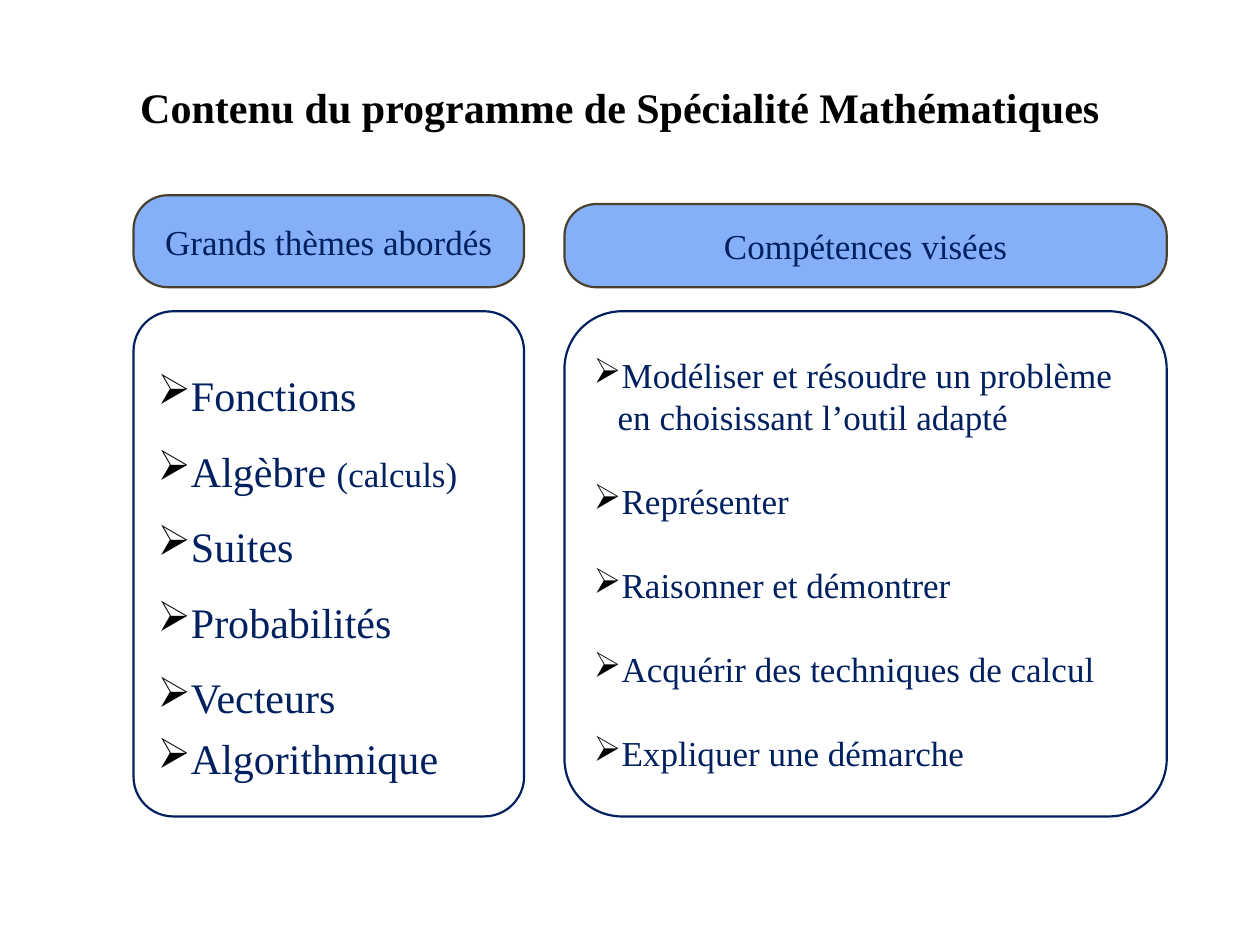
"""Build the slide presenting the mathematics speciality programme."""
from dataclasses import dataclass

from lxml.etree import SubElement
from pptx import Presentation
from pptx.dml.color import RGBColor
from pptx.enum.shapes import MSO_SHAPE
from pptx.enum.text import MSO_ANCHOR, PP_ALIGN
from pptx.oxml.ns import qn
from pptx.util import Inches, Pt

FONT = "Times New Roman"
BLACK = RGBColor(0x00, 0x00, 0x00)
WHITE = RGBColor(0xFF, 0xFF, 0xFF)
NAVY = RGBColor(0x00, 0x20, 0x60)
SKY = RGBColor(0x85, 0xB0, 0xF7)
BROWN = RGBColor(0x4A, 0x40, 0x2E)
HEADER_BOTTOM = 2.28
PANEL_TOP, PANEL_HEIGHT = 2.47, 4.01
INDENT = 0.19


@dataclass
class Item:
    runs: list[tuple[str, int]]
    line_spacing: float = 1.0
    space_before: int = 0


@dataclass
class Column:
    left: float
    width: float
    header: str
    header_height: float
    header_radius: float
    panel_radius: float
    items: list[Item]


COLUMNS = [
    Column(1.06, 3.1, "Grands thèmes abordés", 0.73, 0.373, 0.102, [
        Item([("Fonctions", 24)], 1.5),
        Item([("Algèbre ", 24), ("(calculs)", 20)], 1.5),
        Item([("Suites", 24)], 1.5),
        Item([("Probabilités", 24)], 1.5),
        Item([("Vecteurs", 24)], 1.5),
        Item([("Algorithmique", 24)], space_before=6),
    ]),
    Column(4.48, 4.78, "Compétences visées", 0.66, 0.38, 0.114, [
        Item([("Modéliser et résoudre un problème en choisissant l’outil adapté", 20)]),
        Item([("Représenter", 20)], space_before=24),
        Item([("Raisonner et démontrer", 20)], space_before=24),
        Item([("Acquérir des techniques de calcul", 20)], space_before=24),
        Item([("Expliquer une démarche", 20)], space_before=24),
    ]),
]


def add_run(p, text: str, size: int, color: RGBColor, bold: bool = False) -> None:
    r = p.add_run()
    r.text = text
    r.font.name = FONT
    r.font.size = Pt(size)
    r.font.bold = bold
    r.font.color.rgb = color


def add_bullet(p) -> None:
    pPr = p._p.get_or_add_pPr()
    pPr.set("marL", str(Inches(INDENT)))
    pPr.set("indent", str(Inches(-INDENT)))
    color = SubElement(pPr, qn("a:buClr"))
    SubElement(color, qn("a:srgbClr"), val=str(BLACK))
    SubElement(pPr, qn("a:buChar"), char="➢")


def add_rounded(s, left: float, top: float, width: float, height: float,
                radius: float, fill: RGBColor, line: RGBColor):
    sp = s.shapes.add_shape(MSO_SHAPE.ROUNDED_RECTANGLE, Inches(left), Inches(top),
                            Inches(width), Inches(height))
    sp.adjustments[0] = radius
    sp.shadow.inherit = False
    sp.fill.solid()
    sp.fill.fore_color.rgb = fill
    sp.line.color.rgb = line
    sp.line.width = Pt(1.25)
    tf = sp.text_frame
    tf.word_wrap = True
    tf.vertical_anchor = MSO_ANCHOR.MIDDLE
    return tf


def add_title(s, text: str) -> None:
    sp = s.shapes.add_textbox(Inches(0.67), Inches(0.54), Inches(8.5), Inches(0.61))
    tf = sp.text_frame
    tf.word_wrap = True
    tf.vertical_anchor = MSO_ANCHOR.MIDDLE
    p = tf.paragraphs[0]
    p.alignment = PP_ALIGN.CENTER
    add_run(p, text, 24, BLACK, bold=True)


def add_panel(s, col: Column) -> None:
    tf = add_rounded(s, col.left, PANEL_TOP, col.width, PANEL_HEIGHT,
                     col.panel_radius, WHITE, NAVY)
    for i, item in enumerate(col.items):
        p = tf.add_paragraph() if i else tf.paragraphs[0]
        p.alignment = PP_ALIGN.LEFT
        p.line_spacing = item.line_spacing
        if item.space_before:
            p.space_before = Pt(item.space_before)
        add_bullet(p)
        for text, size in item.runs:
            add_run(p, text, size, NAVY)


def add_header(s, col: Column) -> None:
    tf = add_rounded(s, col.left, HEADER_BOTTOM - col.header_height, col.width,
                     col.header_height, col.header_radius, SKY, BROWN)
    p = tf.paragraphs[0]
    p.alignment = PP_ALIGN.CENTER
    add_run(p, col.header, 20, NAVY)


def main() -> None:
    prs = Presentation()
    prs.slide_width, prs.slide_height = Inches(10), Inches(7.5)
    s = prs.slides.add_slide(prs.slide_layouts[6])
    add_title(s, "Contenu du programme de Spécialité Mathématiques")
    for col in COLUMNS:
        add_panel(s, col)
    for col in COLUMNS:
        add_header(s, col)
    prs.save("out.pptx")


if __name__ == "__main__":
    main()
